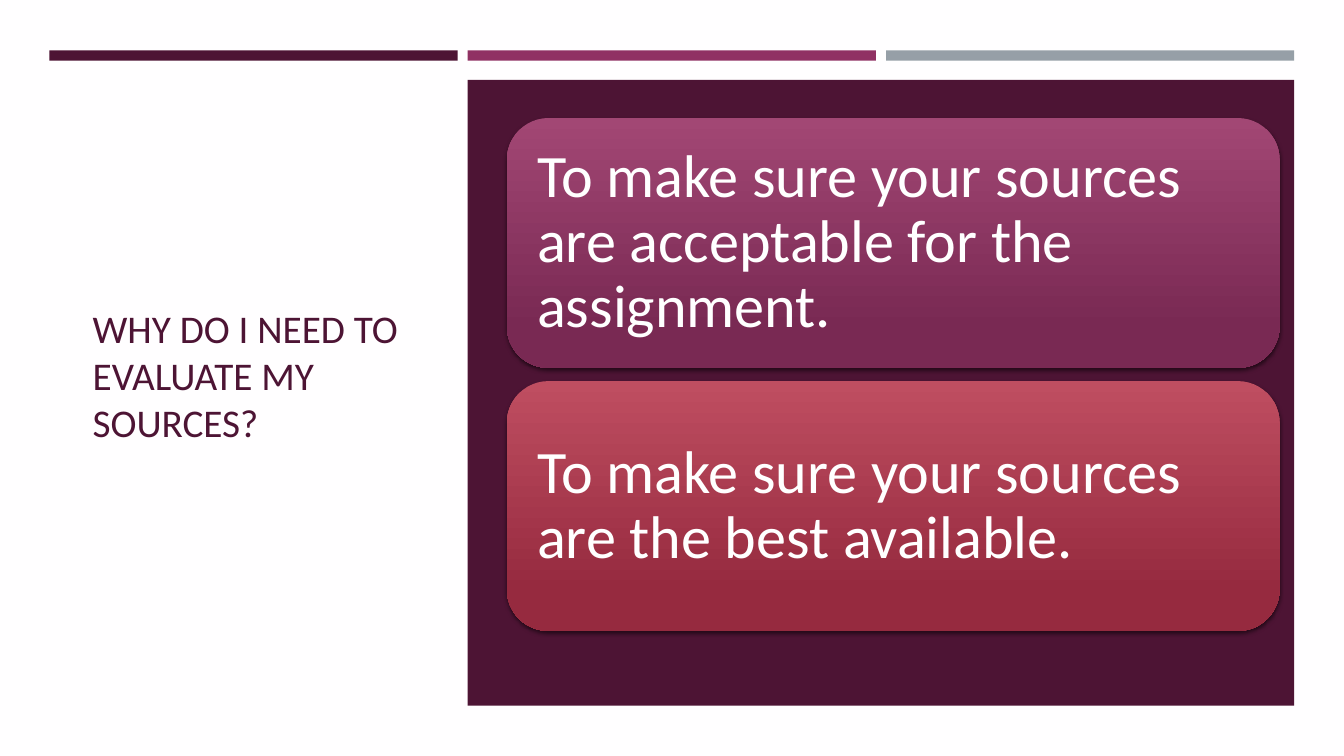
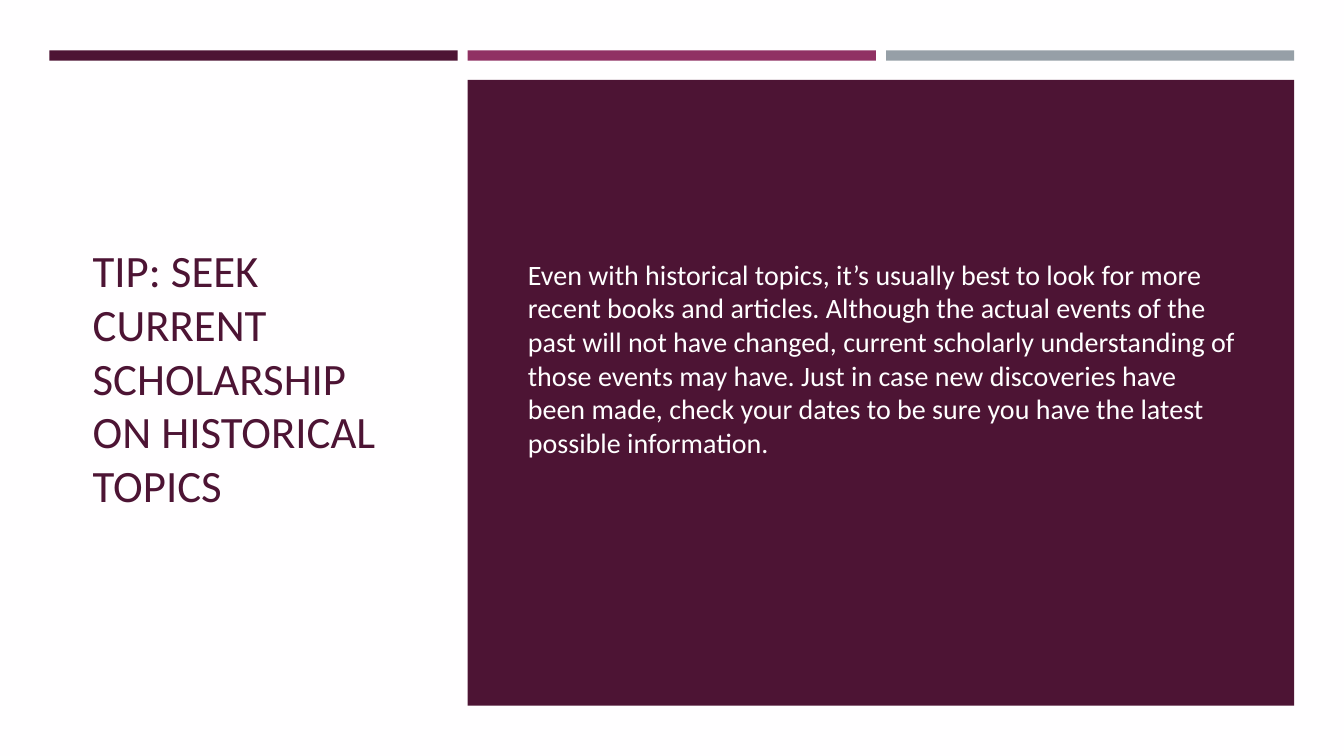
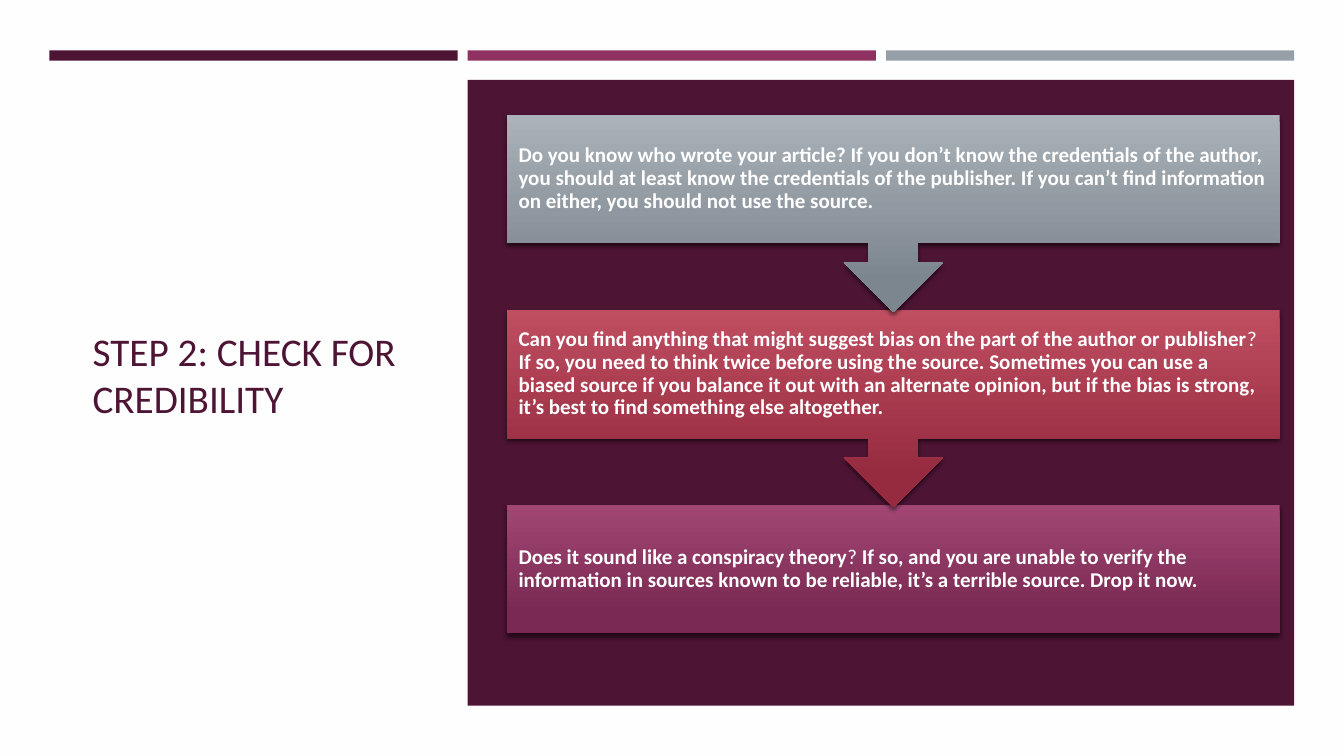
from dataclasses import dataclass

from lxml import etree
from pptx import Presentation
from pptx.dml.color import RGBColor
from pptx.enum.shapes import MSO_SHAPE
from pptx.enum.text import MSO_ANCHOR, MSO_AUTO_SIZE, PP_ALIGN
from pptx.oxml.ns import qn
from pptx.util import Pt

RECT = MSO_SHAPE.RECTANGLE
ROUND = MSO_SHAPE.ROUNDED_RECTANGLE
CALL = MSO_SHAPE.DOWN_ARROW_CALLOUT
MIDDLE = MSO_ANCHOR.MIDDLE
LEFT = PP_ALIGN.LEFT
FIXED = MSO_AUTO_SIZE.NONE


@dataclass(frozen=True)
class Theme:
    font: str = "Calibri"
    paper: str = "FFFEFF"
    white: str = "FFFFFF"
    black: str = "000000"
    plum: str = "4D1434"
    bars: tuple = ("4D1434", "903163", "969FA7")
    pink: tuple = ("A24774", "792953")
    red: tuple = ("BF4E61", "962A3F")
    gray: tuple = ("ABB2B8", "7C868F")
    head: int = 28
    tip: int = 32
    body: int = 20
    card: int = 43
    step: int = 15


THEME = Theme()
CARD_X, CARD_W = 362, 552


def rgb(code):
    return RGBColor.from_string(code)


def write(frame, runs, size, color, inset=None, space=None):
    frame.word_wrap = True
    frame.auto_size = FIXED
    frame.vertical_anchor = MIDDLE
    if inset is not None:
        frame.margin_left = frame.margin_right = Pt(inset)
        frame.margin_top = frame.margin_bottom = Pt(inset)
    para = frame.paragraphs[0]
    para.alignment = LEFT
    if space:
        para.line_spacing = space
    for text, bold in runs:
        run = para.add_run()
        run.text = text
        run.font.name = THEME.font
        run.font.size = Pt(size)
        run.font.bold = bold
        run.font.color.rgb = rgb(color)


def block(slide, kind, left, top, width, height):
    shape = slide.shapes.add_shape(kind, Pt(left), Pt(top), Pt(width), Pt(height))
    shape.shadow.inherit = False
    shape.line.fill.background()
    return shape


def band(slide, color, left, top, width, height):
    shape = block(slide, RECT, left, top, width, height)
    shape.fill.solid()
    shape.fill.fore_color.rgb = rgb(color)


def shade(shape):
    effects = shape.element.spPr.find(qn("a:effectLst"))
    outer = etree.SubElement(
        effects, qn("a:outerShdw"), blurRad=str(Pt(3)), dist=str(Pt(2)),
        dir="5400000", algn="ctr", rotWithShape="0")
    tone = etree.SubElement(outer, qn("a:srgbClr"), val=THEME.black)
    etree.SubElement(tone, qn("a:alpha"), val="55000")


def card(slide, kind, top, height, tones, runs, size, inset):
    shape = block(slide, kind, CARD_X, top, CARD_W, height)
    shape.fill.gradient()
    shape.fill.gradient_angle = 270
    for stop, tone, place in zip(shape.fill.gradient_stops, tones, (0, 0.84)):
        stop.color.rgb = rgb(tone)
        stop.position = place
    shade(shape)
    write(shape.text_frame, runs, size, THEME.white, inset, 0.9)


def start(deck, text, size, top=82):
    slide = deck.slides.add_slide(deck.slide_layouts[5])
    title = slide.shapes.title
    title.left, title.top = Pt(59), Pt(top)
    title.width, title.height = Pt(240.5), Pt(371)
    write(title.text_frame, [(text, False)], size, THEME.plum)
    for col, color in enumerate(THEME.bars):
        band(slide, color, 35.3 + col * 298.8, 36, 291.6, 7.4)
    band(slide, THEME.plum, 334, 57, 590.5, 447)
    return slide


def reasons(deck):
    slide = start(deck, "WHY DO I NEED TO EVALUATE MY SOURCES?", THEME.head)
    items = (
        (THEME.pink, "To make sure your sources are acceptable for the assignment."),
        (THEME.red, "To make sure your sources are the best available."),
    )
    for row, (tones, text) in enumerate(items):
        card(slide, ROUND, 84.3 + row * 187.9, 178.5, tones,
             [(text, False)], THEME.card, 13)


def advice(deck):
    slide = start(deck, "TIP: SEEK CURRENT SCHOLARSHIP ON HISTORICAL TOPICS",
                  THEME.tip, 84)
    box = slide.shapes.add_textbox(Pt(370), Pt(84), Pt(520), Pt(371))
    text = (
        "Even with historical topics, it’s usually best to look for more recent "
        "books and articles. Although the actual events of the past will not have "
        "changed, current scholarly understanding of those events may have. Just in "
        "case new discoveries have been made, check your dates to be sure you have "
        "the latest possible information."
    )
    write(box.text_frame, [(text, False)], THEME.body, THEME.white)
    box.text_frame.margin_bottom = Pt(31)


def checks(deck):
    slide = start(deck, "STEP 2: CHECK FOR CREDIBILITY", THEME.head)
    steps = (
        (CALL, 141, THEME.gray, [
            ("Do you know who wrote your article? If you don’t know the credentials "
             "of the author, you should at least know the credentials of the "
             "publisher. If you can’t find information on either, you should not "
             "use the source.", True)]),
        (CALL, 141, THEME.red, [
            ("Can you find anything that might suggest bias on the part of the "
             "author or publisher", True),
            ("? ", False),
            ("If so, you need to think twice before using the source. Sometimes you "
             "can use a biased source if you balance it out with an alternate "
             "opinion, but if the bias is strong, it’s best to find something else "
             "altogether.", True)]),
        (RECT, 91.5, THEME.pink, [
            ("Does it sound like a conspiracy theory", True),
            ("? ", False),
            ("If so, and you are unable to verify the information in sources known "
             "to be reliable, it’s a terrible source. Drop it now.", True)]),
    )
    for row, (kind, height, tones, runs) in reversed(list(enumerate(steps))):
        card(slide, kind, 82 + row * 139.4, height, tones, runs, THEME.step, 8.4)


def main():
    deck = Presentation()
    deck.slide_width, deck.slide_height = Pt(960), Pt(540)
    fill = deck.slide_master.background.fill
    fill.solid()
    fill.fore_color.rgb = rgb(THEME.paper)
    reasons(deck)
    advice(deck)
    checks(deck)
    deck.save("out.pptx")


if __name__ == "__main__":
    main()
